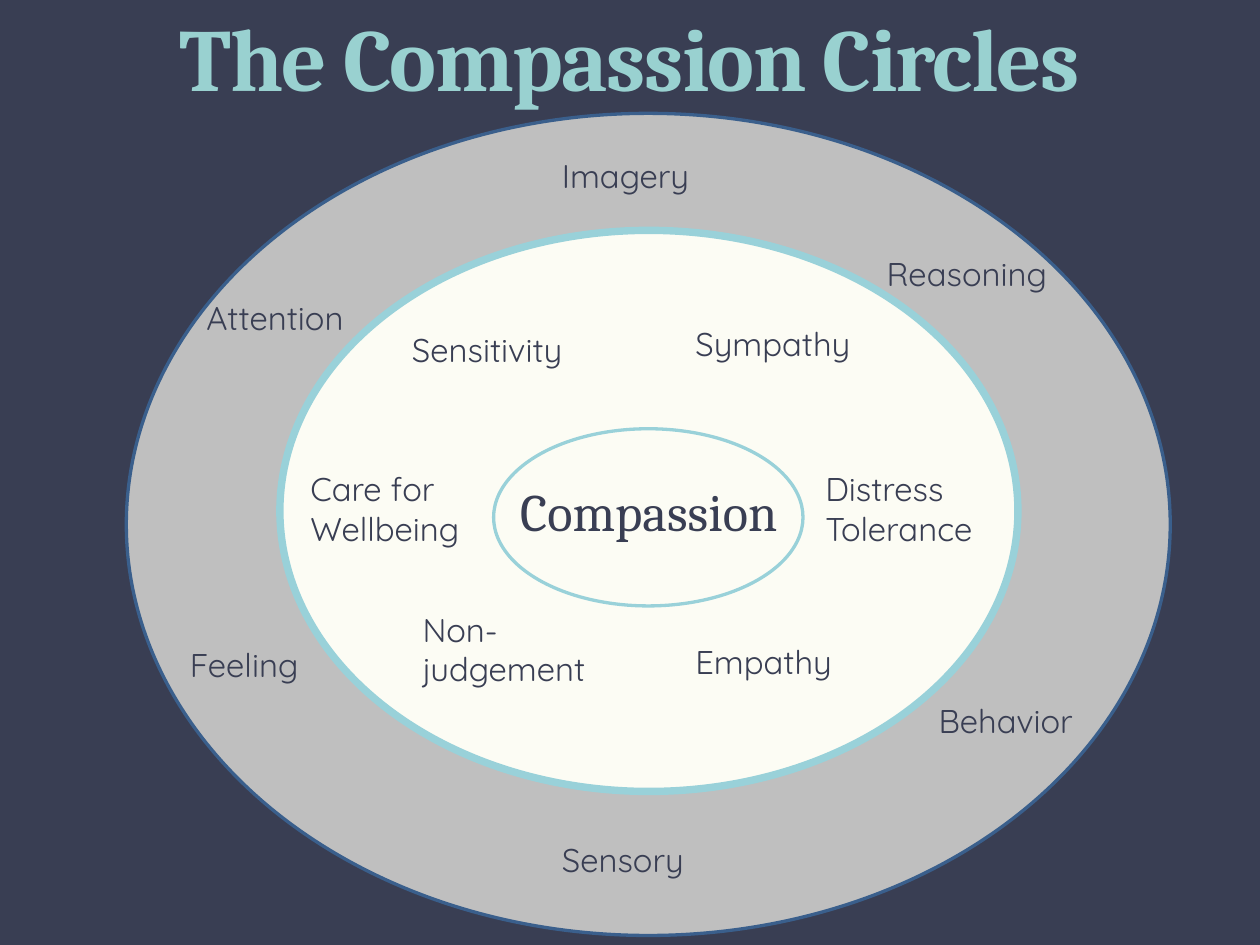
from dataclasses import dataclass

from pptx import Presentation
from pptx import util as u
from pptx.dml.color import RGBColor
from pptx.enum import shapes, text


@dataclass(frozen=True)
class Theme:
    navy: str = "393E53"
    teal: str = "99D1D0"
    ring: str = "99D1D9"
    grey: str = "BFBFBF"
    cream: str = "FCFCF4"
    blue: str = "3A5F8C"
    heading_font: str = "Cambria"
    label_font: str = "Quicksand"
    title_size: int = 54
    centre_size: int = 32
    label_size: int = 20


def apply_format(target, values):
    for name, value in values.items():
        setattr(target, name, value)


class CircleSlide:
    def __init__(self, presentation, theme):
        self.theme = theme
        self.slide = presentation.slides.add_slide(presentation.slide_layouts[5])
        fill = self.slide.background.fill
        fill.solid()
        fill.fore_color.rgb = RGBColor.from_string(theme.navy)

    def add_words(self, shape, wording, font, size, color, **font_values):
        paragraph = shape.text_frame.paragraphs[0]
        run = paragraph.add_run()
        run.text = wording
        apply_format(run.font, {"name": font, "size": u.Pt(size), **font_values})
        run.font.color.rgb = RGBColor.from_string(color)
        return paragraph, run

    def title(self, wording, box):
        theme = self.theme
        shape = self.slide.shapes.title
        apply_format(shape, dict(zip(("left", "top", "width", "height"), map(u.Inches, box))))
        apply_format(shape.text_frame, {
            "margin_left": 0, "margin_right": 0, "margin_top": 0, "margin_bottom": 0,
            "vertical_anchor": text.MSO_ANCHOR.TOP, "word_wrap": True,
            "auto_size": text.MSO_AUTO_SIZE.NONE,
        })
        paragraph, run = self.add_words(
            shape, wording, theme.heading_font, theme.title_size, theme.teal, bold=True)
        apply_format(paragraph, {"alignment": text.PP_ALIGN.CENTER, "line_spacing": u.Pt(50)})
        run._r.get_or_add_rPr().set("spc", "-100")

    def ellipse(self, box, line_color, line_width, fill_color=None):
        shape = self.slide.shapes.add_shape(shapes.MSO_SHAPE.OVAL, *map(u.Inches, box))
        shape.shadow.inherit = False
        if fill_color:
            shape.fill.solid()
            shape.fill.fore_color.rgb = RGBColor.from_string(fill_color)
        else:
            shape.fill.background()
        shape.line.color.rgb = RGBColor.from_string(line_color)
        shape.line.width = u.Pt(line_width)
        return shape

    def centre_word(self, shape, wording):
        theme = self.theme
        shape.text_frame.vertical_anchor = text.MSO_ANCHOR.MIDDLE
        paragraph, _ = self.add_words(
            shape, wording, theme.heading_font, theme.centre_size, theme.navy)
        paragraph.alignment = text.PP_ALIGN.CENTER

    def label(self, wording, left, top, width=2.23, height=0.44):
        theme = self.theme
        shape = self.slide.shapes.add_textbox(*map(u.Inches, (left, top, width, height)))
        shape.text_frame.word_wrap = True
        self.add_words(shape, wording, theme.label_font, theme.label_size, theme.navy)


# Labels: wording, left, top and, where it differs, width and height
ATTRIBUTES = [
    ("Sensitivity", 3.39, 2.74, 2),
    ("Sympathy", 5.79, 2.69),
    ("Distress Tolerance", 6.89, 3.92, 1.89, 0.77),
    ("Empathy", 5.79, 5.38),
    ("Non-judgement", 3.48, 5.11, 2.1, 0.77),
    ("Care for Wellbeing", 2.53, 3.92, 1.9, 0.77),
]
SKILLS = [
    ("Imagery", 4.66, 1.27),
    ("Reasoning", 7.41, 2.1),
    ("Behavior", 7.85, 5.88),
    ("Sensory", 4.66, 7.06),
    ("Feeling", 1.51, 5.41),
    ("Attention", 1.65, 2.47, 1.47),
]


def main():
    presentation = Presentation()
    presentation.slide_width = u.Inches(10.67)
    presentation.slide_height = u.Inches(8)
    theme = Theme()
    circles = CircleSlide(presentation, theme)

    # Title
    circles.title("The Compassion Circles", (0.21, 0.23, 10.25, 0.73))

    # Outer and middle circles
    circles.ellipse((1.07, 0.96, 8.84, 6.96), theme.blue, 2, theme.grey)
    middle = circles.ellipse((2.37, 1.95, 6.25, 4.75), theme.ring, 4.5, theme.cream)
    circles.centre_word(middle, "Compassion")

    # Labels in both rings
    for entry in ATTRIBUTES + SKILLS:
        circles.label(*entry)

    # Inner circle around the centre word
    circles.ellipse((4.18, 3.63, 2.62, 1.5), theme.ring, 2)

    presentation.save("out.pptx")


if __name__ == "__main__":
    main()
